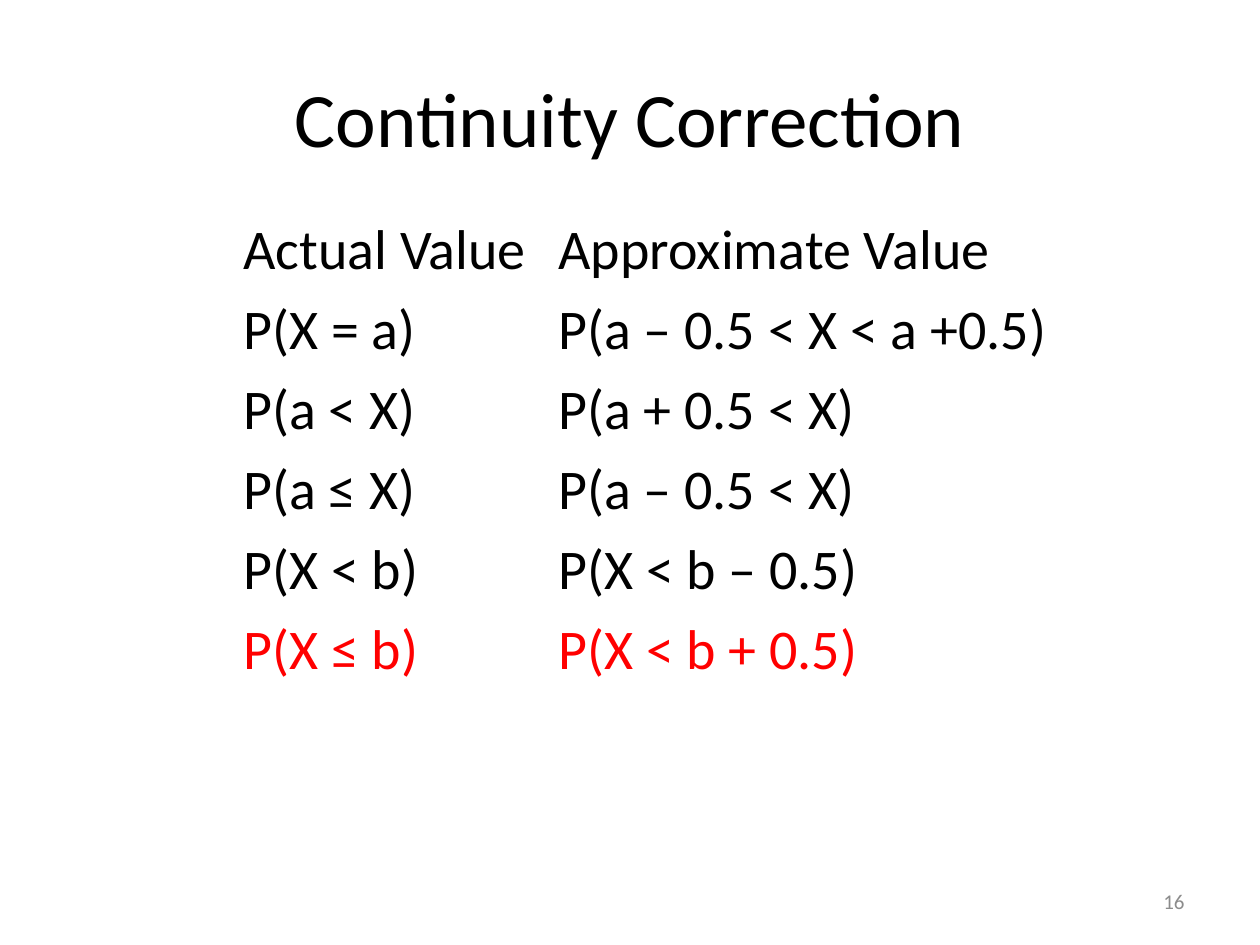
from dataclasses import dataclass

from lxml import etree
from pptx import Presentation
from pptx.dml.color import RGBColor
from pptx.enum.text import MSO_ANCHOR, PP_ALIGN
from pptx.oxml.ns import qn
from pptx.util import Pt

LEFT, MID, RIGHT = PP_ALIGN.LEFT, PP_ALIGN.CENTER, PP_ALIGN.RIGHT
CENTER = MSO_ANCHOR.MIDDLE
SCALE = 914400 / 126


@dataclass(frozen=True)
class Theme:
    font: str = "Calibri"
    ink: str = "000000"
    accent: str = "FF0000"
    muted: str = "8C8C8C"
    border: str = "FFFFFF"
    title: int = 44
    body: int = 32
    note: int = 12


THEME = Theme()
ROWS = [
    ("Actual Value", "Approximate Value"),
    ("P(X = a)", "P(a – 0.5 < X < a +0.5)"),
    ("P(a < X)", "P(a + 0.5 < X)"),
    ("P(a ≤ X)", "P(a – 0.5 < X)"),
    ("P(X < b)", "P(X < b – 0.5)"),
    ("P(X ≤ b)", "P(X < b + 0.5)"),
]


def px(size):
    return round(size * SCALE)


def write(frame, text, size, color, align=LEFT):
    frame.text = text
    for para in frame.paragraphs:
        para.alignment = align
        for run in para.runs:
            run.font.name = THEME.font
            run.font.size = Pt(size)
            run.font.color.rgb = RGBColor.from_string(color)


def add_label(slide, box, text, size, color, align):
    frame = slide.shapes.add_textbox(*map(px, box)).text_frame
    frame.word_wrap = True
    frame.vertical_anchor = CENTER
    write(frame, text, size, color, align)


def add_border(cell):
    props = cell._tc.get_or_add_tcPr()
    for side in ("L", "R", "T", "B"):
        line = etree.SubElement(props, qn(f"a:ln{side}"), w=str(Pt(1)))
        fill = etree.SubElement(line, qn("a:solidFill"))
        etree.SubElement(fill, qn("a:srgbClr"), val=THEME.border)


def add_grid(slide, left, top, widths, height, rows):
    box = (left, top, sum(widths), height * len(rows))
    table = slide.shapes.add_table(len(rows), len(widths), *map(px, box)).table
    table.first_row = False
    table.horz_banding = False
    for column, width in zip(table.columns, widths):
        column.width = px(width)
    for row, texts in zip(table.rows, rows):
        row.height = px(height)
        color = THEME.accent if texts == rows[-1] else THEME.ink
        for cell, text in zip(row.cells, texts):
            add_border(cell)
            cell.fill.background()
            write(cell.text_frame, text, THEME.body, color)


def main():
    deck = Presentation()
    deck.slide_width = px(1260)
    deck.slide_height = px(945)
    slide = deck.slides.add_slide(deck.slide_layouts[6])
    add_label(slide, (63, 38, 1134, 157), "Continuity Correction",
              THEME.title, THEME.ink, MID)
    add_grid(slide, 231, 210, (315, 514), 80, ROWS)
    add_label(slide, (903, 876, 294, 50), "16",
              THEME.note, THEME.muted, RIGHT)
    deck.save("out.pptx")


if __name__ == "__main__":
    main()
